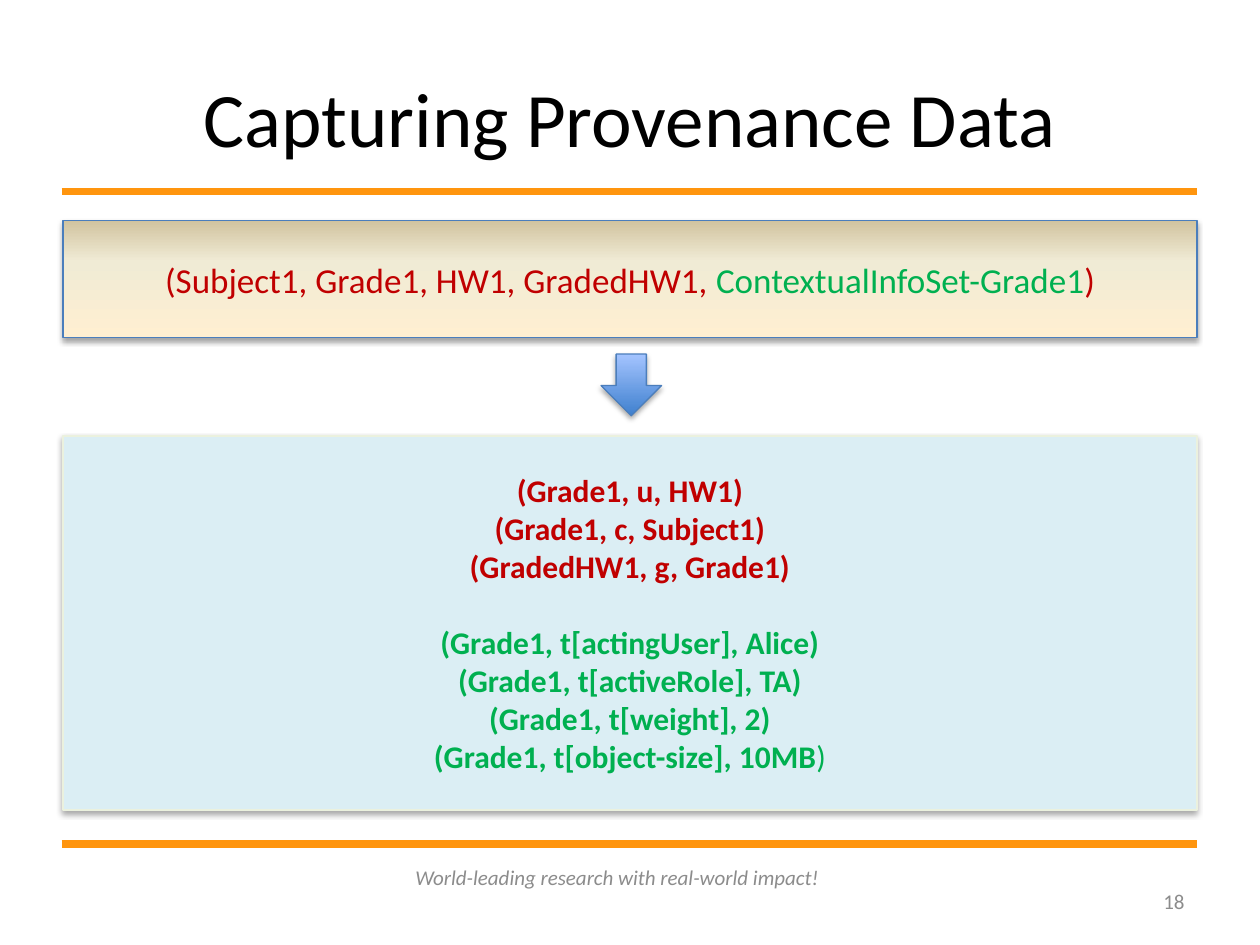
"""Build the slide on capturing provenance data."""
from lxml import etree
from pptx import Presentation
from pptx.dml.color import RGBColor
from pptx.enum.shapes import MSO_CONNECTOR, MSO_SHAPE
from pptx.enum.text import MSO_ANCHOR, PP_ALIGN
from pptx.oxml import parse_xml
from pptx.oxml.ns import nsdecls, qn
from pptx.util import Inches, Pt

LINE = MSO_CONNECTOR.STRAIGHT
RECT, ARROW = MSO_SHAPE.RECTANGLE, MSO_SHAPE.DOWN_ARROW
MIDDLE = MSO_ANCHOR.MIDDLE
CENTER, RIGHT = PP_ALIGN.CENTER, PP_ALIGN.RIGHT

BLACK = RGBColor(0x00, 0x00, 0x00)
GRAY = RGBColor(0x8C, 0x8C, 0x8C)
ORANGE = RGBColor(0xFF, 0x95, 0x0E)
RED = RGBColor(0xC0, 0x00, 0x00)
GREEN = RGBColor(0x00, 0xB0, 0x50)
BLUE = RGBColor(0x4B, 0x7E, 0xBC)
PALE = RGBColor(0xDB, 0xEE, 0xF4)
EDGE = RGBColor(0xEB, 0xF1, 0xDE)
CREAM = RGBColor(0xFF, 0xEF, 0xD1)
IVORY = RGBColor(0xF0, 0xEB, 0xD5)
TAN = RGBColor(0xD1, 0xC3, 0x9F)
DEEP = RGBColor(0x3F, 0x80, 0xCE)
LIGHT = RGBColor(0xA4, 0xC4, 0xFF)


def add_run(para, text, size, color, bold=False, italic=False):
    run = para.add_run()
    run.text = text
    font = run.font
    font.name, font.size = "Calibri", Pt(size)
    font.bold, font.italic = bold, italic
    font.color.rgb = color


def add_block(kind, box, stops, edge):
    shape = slide.shapes.add_shape(kind, *map(Inches, box))
    shape.line.color.rgb = edge
    shape.line.width = Pt(0.75)
    shape.shadow.inherit = False
    props = shape._element.spPr
    props.find(qn("a:effectLst")).append(parse_xml(
        f'<a:outerShdw {nsdecls("a")} blurRad="{Pt(3.1)}" dist="{Pt(1.8)}" '
        'dir="5400000" rotWithShape="0"><a:srgbClr val="000000">'
        '<a:alpha val="35000"/></a:srgbClr></a:outerShdw>'))
    if len(stops) == 1:
        shape.fill.solid()
        shape.fill.fore_color.rgb = stops[0][1]
    else:
        marks = "".join(
            f'<a:gs pos="{pos * 1000}"><a:srgbClr val="{color}"/></a:gs>'
            for pos, color in stops)
        props.find(qn("a:prstGeom")).addnext(parse_xml(
            f'<a:gradFill {nsdecls("a")} rotWithShape="1"><a:gsLst>{marks}'
            '</a:gsLst><a:lin ang="16200000" scaled="0"/></a:gradFill>'))
    shape.text_frame.vertical_anchor = MIDDLE
    shape.text_frame.word_wrap = True
    return shape


deck = Presentation()
deck.slide_width, deck.slide_height = Inches(10), Inches(7.5)
slide = deck.slides.add_slide(deck.slide_layouts[6])

for y in (1.52, 6.7):
    rule = slide.shapes.add_connector(
        LINE, Inches(0.49), Inches(y), Inches(9.5), Inches(y))
    rule.line.color.rgb = ORANGE
    rule.line.width = Pt(4.31)
    etree.SubElement(rule._element.spPr, qn("a:effectLst"))

labels = [
    ((0.5, 0.3, 9, 1.25), "Capturing Provenance Data", 44, BLACK, CENTER, False, 0.1),
    ((3.13, 6.76, 3.62, 0.4), "World-leading research with real-world impact!",
     12, GRAY, CENTER, True, 0.18),
    ((7.17, 6.95, 2.33, 0.4), "18", 12, GRAY, RIGHT, False, 0.1),
]
for box, text, size, color, align, italic, inset in labels:
    frame = slide.shapes.add_textbox(*map(Inches, box)).text_frame
    frame.word_wrap = True
    frame.vertical_anchor = MIDDLE
    frame.margin_right = Inches(inset)
    para = frame.paragraphs[0]
    para.alignment = align
    add_run(para, text, size, color, italic=italic)

event = add_block(RECT, (0.5, 1.75, 9, 0.93),
                  [(0, CREAM), (65, IVORY), (100, TAN)], BLUE)
para = event.text_frame.paragraphs[0]
para.alignment = CENTER
for text, color in [("(Subject1, Grade1, HW1, GradedHW1, ", RED),
                    ("ContextualInfoSet-Grade1", GREEN), (")", RED)]:
    add_run(para, text, 20, color)

facts = add_block(RECT, (0.5, 3.46, 9, 2.97), [(0, PALE)], EDGE)
groups = [
    (RED, ["(Grade1, u, HW1)", "(Grade1, c, Subject1)", "(GradedHW1, g, Grade1)"]),
    (GREEN, ["(Grade1, t[actingUser], Alice)", "(Grade1, t[activeRole], TA)",
             "(Grade1, t[weight], 2)", "(Grade1, t[object-size], 10MB"]),
]
para = facts.text_frame.paragraphs[0]
for color, lines in groups:
    for text in lines:
        if para.runs:
            para = facts.text_frame.add_paragraph()
            if text == lines[0]:
                para.space_before = Pt(22)
        para.alignment = CENTER
        add_run(para, text, 18, color, bold=True)
add_run(para, ")", 18, GREEN)

add_block(ARROW, (4.77, 2.81, 0.48, 0.49), [(0, DEEP), (100, LIGHT)], BLUE)

deck.save("out.pptx")
